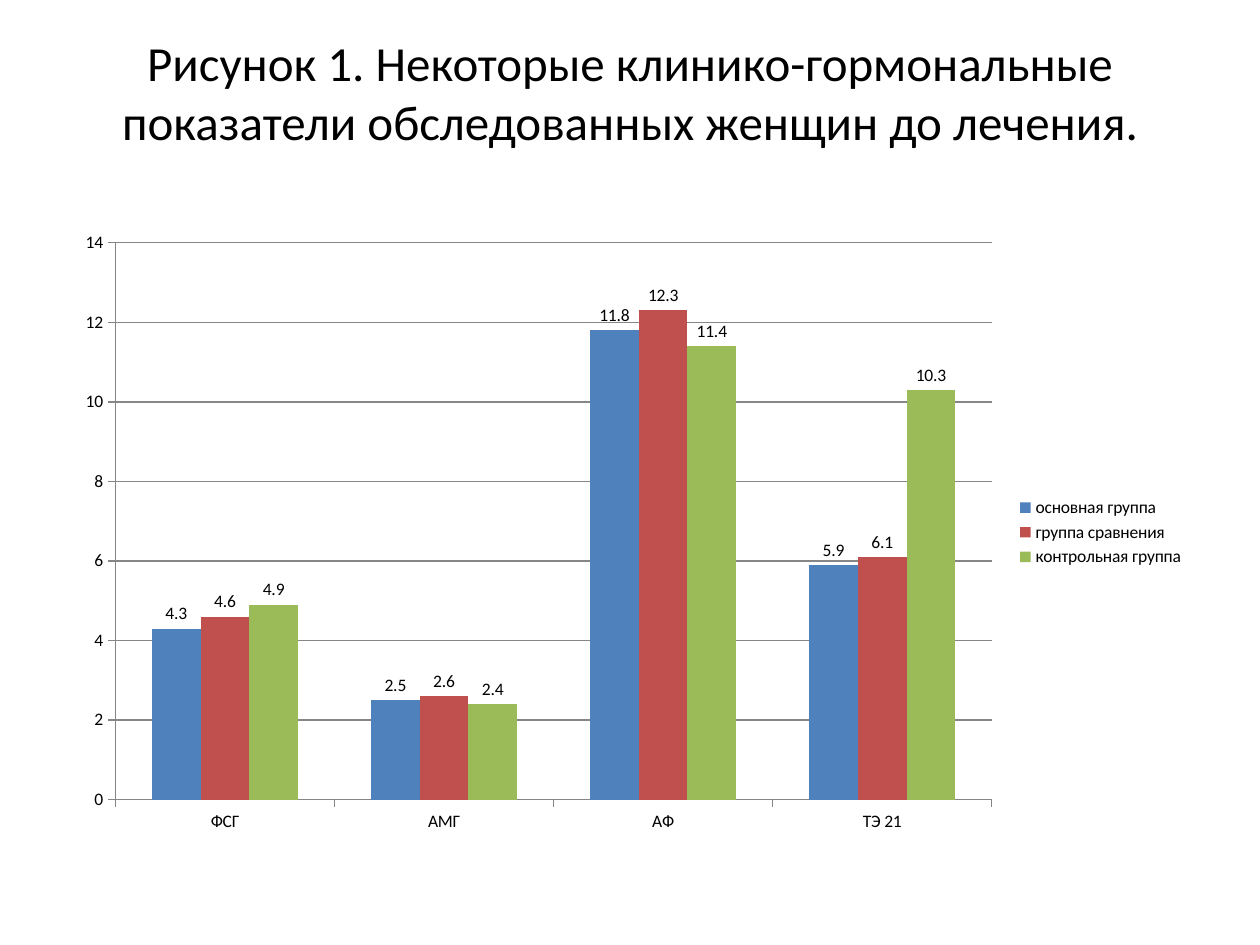
import pptx
import pptx.chart.data
import pptx.dml.color
import pptx.enum.chart
import pptx.enum.text
import pptx.util
from dataclasses import dataclass

Inches = pptx.util.Inches
RGB = pptx.dml.color.RGBColor.from_string


@dataclass(frozen=True)
class Theme:
    font: str = "Calibri"
    text: str = "000000"
    line: str = "868686"
    groups: tuple = ("4F81BD", "C0504D", "9BBB59")
    title_size: int = 28
    chart_size: int = 10


THEME = Theme()
TITLE = "Рисунок 1. Некоторые клинико-гормональные показатели обследованных женщин до лечения."
INDICATORS = ["ФСГ", "АМГ", "АФ", "ТЭ 21"]
GROUPS = {
    "основная группа": (4.3, 2.5, 11.8, 5.9),
    "группа сравнения": (4.6, 2.6, 12.3, 6.1),
    "контрольная группа": (4.9, 2.4, 11.4, 10.3),
}


def style_font(font, size):
    font.name = THEME.font
    font.size = pptx.util.Pt(size)
    font.color.rgb = RGB(THEME.text)


def add_title(slide, left, top, width, height):
    sp = slide.shapes.title
    sp.left, sp.top, sp.width, sp.height = left, top, width, height
    tf = sp.text_frame
    tf.text = TITLE
    tf.word_wrap = True
    tf.auto_size = pptx.enum.text.MSO_AUTO_SIZE.NONE
    tf.vertical_anchor = pptx.enum.text.MSO_ANCHOR.MIDDLE
    # The deeper bottom inset lifts the heading away from the chart
    tf.margin_top, tf.margin_bottom = 0, Inches(0.4)
    p = tf.paragraphs[0]
    p.alignment = pptx.enum.text.PP_ALIGN.CENTER
    style_font(p.runs[0].font, THEME.title_size)


def add_group_chart(slide, left, top, width, height):
    data = pptx.chart.data.CategoryChartData()
    data.categories = INDICATORS
    for name, values in GROUPS.items():
        data.add_series(name, values)
    chart = slide.shapes.add_chart(
        pptx.enum.chart.XL_CHART_TYPE.COLUMN_CLUSTERED,
        left, top, width, height, data).chart
    style_font(chart.font, THEME.chart_size)
    chart.has_title = False

    # Legend
    chart.has_legend = True
    chart.legend.position = pptx.enum.chart.XL_LEGEND_POSITION.RIGHT
    chart.legend.include_in_layout = False

    # Axes and gridlines
    chart.value_axis.has_major_gridlines = True
    lines = [chart.value_axis.major_gridlines.format.line]
    for axis in (chart.category_axis, chart.value_axis):
        axis.major_tick_mark = pptx.enum.chart.XL_TICK_MARK.OUTSIDE
        lines.append(axis.format.line)
    for line in lines:
        line.color.rgb = RGB(THEME.line)
        line.width = pptx.util.Pt(0.75)

    # Columns with their values
    plot = chart.plots[0]
    plot.gap_width = 150
    plot.overlap = 0
    plot.vary_by_categories = False
    for series, color in zip(plot.series, THEME.groups):
        series.format.fill.solid()
        series.format.fill.fore_color.rgb = RGB(color)
        labels = series.data_labels
        labels.show_value = True
        labels.position = pptx.enum.chart.XL_LABEL_POSITION.OUTSIDE_END
        style_font(labels.font, THEME.chart_size)


def main():
    prs = pptx.Presentation()
    prs.slide_width, prs.slide_height = Inches(10), Inches(7.5)
    slide = prs.slides.add_slide(prs.slide_layouts[5])
    margin, width = Inches(0.5), Inches(9)
    add_title(slide, margin, Inches(0.3), width, Inches(1.25))
    add_group_chart(slide, margin, Inches(1.75), width, Inches(4.95))
    prs.save("out.pptx")


if __name__ == "__main__":
    main()
